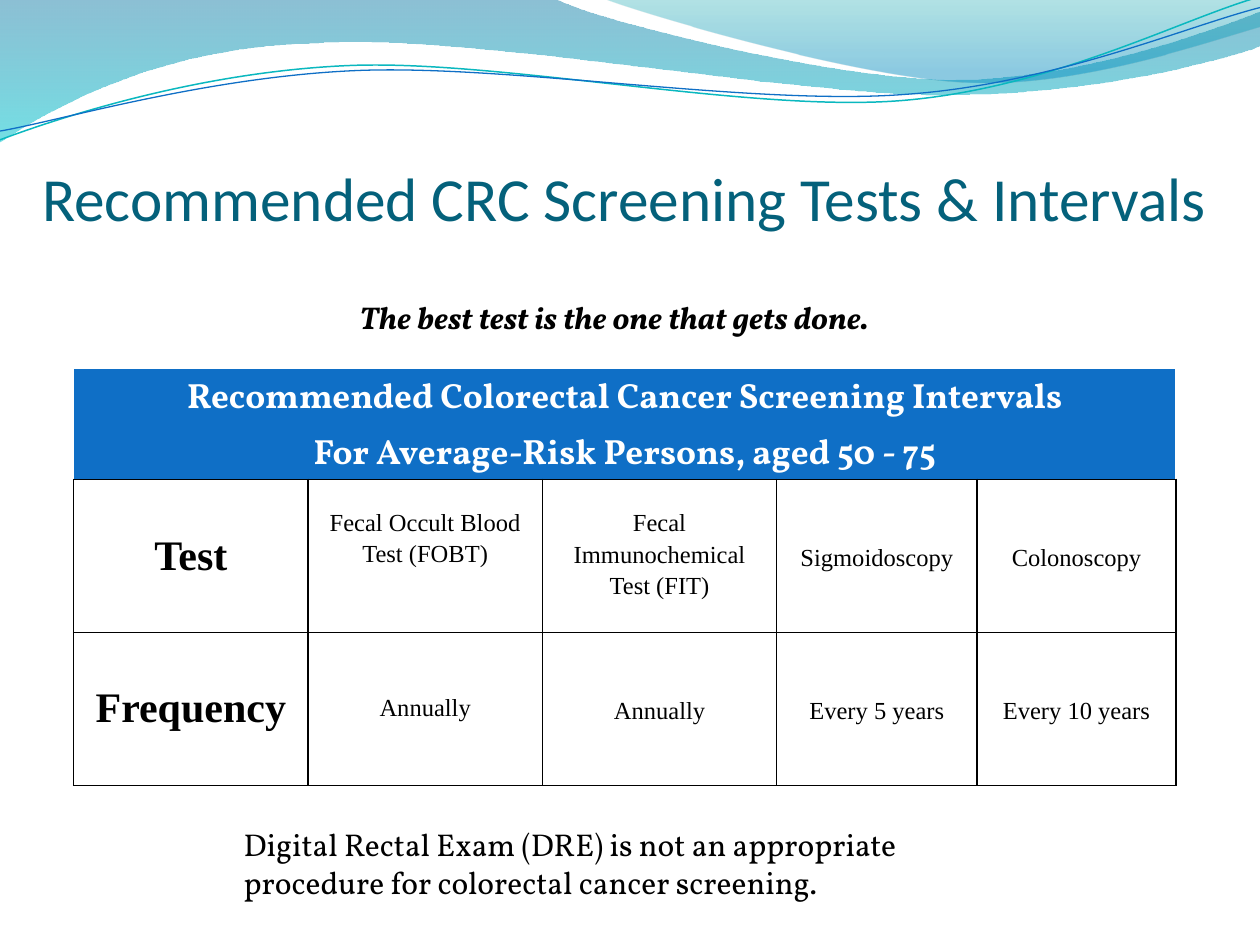
from math import cos, radians, sin

from lxml import etree
from pptx import Presentation
from pptx.dml.color import RGBColor
from pptx.enum.text import MSO_ANCHOR, PP_ALIGN
from pptx.oxml.ns import qn
from pptx.util import Emu, Inches, Pt

# Grid of 100 columns by 75 rows
WIDTH, HEIGHT = Inches(10), Inches(7.5)
UNIT = WIDTH / 100

CENTER, LEFT = PP_ALIGN.CENTER, PP_ALIGN.LEFT
MIDDLE, TOP, BOTTOM = MSO_ANCHOR.MIDDLE, MSO_ANCHOR.TOP, MSO_ANCHOR.BOTTOM

BLACK = RGBColor(0x00, 0x00, 0x00)
WHITE = RGBColor(0xFF, 0xFF, 0xFF)
BLUE = RGBColor(0x0F, 0x6F, 0xC6)
TEAL = RGBColor(0x0A, 0xB8, 0xBF)
TITLE_TEAL = RGBColor(0x04, 0x61, 0x7B)
DEEP_BLUE = RGBColor(0x00, 0x74, 0xA1)
CYAN = RGBColor(0x00, 0xC6, 0xCF)
SEA_GREEN = RGBColor(0x00, 0xA1, 0xA9)
SKY_BLUE = RGBColor(0x00, 0x8B, 0xBF)

SANS, SERIF, TABLE_FONT = "Calibri", "Vollkorn", "Times New Roman"
LINE_TILT = 2.7

# Each path is a start point, then steps: one point is a line, three a curve
BROAD_WAVE = ((0, 0), [
    [(44, -0.1)],
    [(47.6, 1.7), (66.4, 6.3), (75.8, 6.3)],
    [(85.3, 6.3), (95.8, 2.6), (100, 0.9)],
    [(100.1, 3.6)],
    [(98.3, 4.4), (87, 7.6), (74.6, 7.5)],
    [(62.2, 7.5), (38.2, 2.8), (25.7, 3.4)],
    [(12.9, 3.6), (4.6, 8.3), (-0.1, 11.3)],
    [(0, 0)],
])
RIGHT_WAVE = ((47.9, -0.1), [
    [(50.9, 1.1), (68.2, 6.2), (76.9, 6.5)],
    [(85.6, 6.9), (96.1, 3.2), (100, 2.1)],
    [(100, 0)],
    [(47.9, -0.1)],
])
TEAL_LINE = ((0, 11.1), [
    [(4.8, 9.3), (15.8, 5.7), (27.7, 5.2)],
    [(39.5, 4.7), (59.3, 8.9), (71.3, 8)],
    [(83.3, 7.1), (93.8, 1.5), (99.8, -0.2)],
])
BLUE_LINE = ((0, 10.4), [
    [(4.7, 9.6), (16.4, 6.1), (28.3, 5.6)],
    [(40.3, 5.1), (59.7, 8.4), (71.7, 7.5)],
    [(83.6, 6.7), (94.1, 2.1), (100, 0.6)],
])

COLUMNS = [18.6, 18.6, 18.6, 15.9, 15.8]
ROWS = [8.85, 12.15, 12.15]
HEADING = ["Recommended Colorectal Cancer Screening Intervals",
           "For Average-Risk Persons, aged 50 - 75"]
BODY = [
    ["Test", "Fecal Occult Blood Test (FOBT)", "Fecal Immunochemical Test (FIT)",
     "Sigmoidoscopy", "Colonoscopy"],
    ["Frequency", "Annually", "Annually", "Every 5 years", "Every 10 years"],
]
# Space below the text of each body cell, in inches
GAPS_BELOW = [[0.05, 0.3, 0.05, 0, 0], [0.07, 0.05, 0, 0, 0]]


def grid(*lengths):
    return [Emu(round(length * UNIT)) for length in lengths]


def turn(point, center, angle):
    """Point turned clockwise about the centre."""
    x, y = point[0] - center[0], point[1] - center[1]
    c, s = cos(radians(angle)), sin(radians(angle))
    return center[0] + x * c - y * s, center[1] + x * s + y * c


def add_outline(page, outline, close=False):
    start, steps = outline
    points = [grid(*point) for step in steps for point in step]
    builder = page.shapes.build_freeform(*grid(*start))
    builder.add_line_segments(points, close=close)
    shape = builder.convert_to_shape()
    shape.shadow.inherit = False
    # Gather each three points into one Bezier curve
    segments = iter(list(shape.element.iter(qn("a:lnTo"))))
    for step in steps:
        parts = [next(segments) for _ in step]
        if len(parts) == 3:
            curve = etree.Element(qn("a:cubicBezTo"))
            parts[0].addprevious(curve)
            for part in parts:
                curve.append(part[0])
                part.getparent().remove(part)
    return shape


def add_wave(page, outline, stops):
    """Filled wave; stops are (position, colour, opacity in percent)."""
    shape = add_outline(page, outline, True)
    shape.line.fill.background()
    shape.fill.gradient()
    shape.fill.gradient_angle = 270
    for stop, (position, color, _) in zip(shape.fill.gradient_stops, stops):
        stop.position = position
        stop.color.rgb = color
    colors = shape.element.spPr.iter(qn("a:srgbClr"))
    for element, (_, _, opacity) in zip(colors, stops):
        etree.SubElement(element, qn("a:alpha")).set("val", str(opacity * 1000))


def add_wave_line(page, outline, center, color, width):
    """Thin curve, laid level and then tilted as a shape."""
    start, steps = outline
    level = [[turn(point, center, LINE_TILT) for point in step] for step in steps]
    shape = add_outline(page, (turn(start, center, LINE_TILT), level))
    shape.rotation = 360 - LINE_TILT
    shape.fill.background()
    shape.line.color.rgb = color
    shape.line.width = Pt(width)


def add_span(para, text, font, size, color, bold=False, italic=False):
    span = para.add_run()
    span.text = text
    span.font.name, span.font.size = font, Pt(size)
    span.font.color.rgb = color
    span.font.bold, span.font.italic = bold, italic


def add_text(page, place, text, font, size, color, align=LEFT, **style):
    box = page.shapes.add_textbox(*grid(*place))
    frame = box.text_frame
    frame.word_wrap = True
    para = frame.paragraphs[0]
    para.alignment = align
    add_span(para, text, font, size, color, **style)
    return frame


def set_borders(cell, colors):
    """Borders in the order left, right, top, bottom."""
    properties = cell._tc.get_or_add_tcPr()
    for index, (side, color) in enumerate(zip(("lnL", "lnR", "lnT", "lnB"), colors)):
        line = etree.Element(qn(f"a:{side}"), w=str(Pt(1)))
        fill = etree.SubElement(line, qn("a:solidFill"))
        etree.SubElement(fill, qn("a:srgbClr"), val=str(color))
        properties.insert(index, line)


def fill_cell(cell, lines, anchor, borders, *style):
    cell.margin_left = cell.margin_right = Inches(0.07)
    cell.margin_top = cell.margin_bottom = 0
    cell.vertical_anchor = anchor
    frame = cell.text_frame
    for index, text in enumerate(lines):
        para = frame.add_paragraph() if index else frame.paragraphs[0]
        para.alignment, para.line_spacing = CENTER, 1.15
        add_span(para, text, *style)
    set_borders(cell, borders)


def add_interval_table(page):
    place = grid(5.85, 29.2, sum(COLUMNS), sum(ROWS))
    table = page.shapes.add_table(len(ROWS), len(COLUMNS), *place).table
    table.first_row = table.horz_banding = False
    for column, width in zip(table.columns, grid(*COLUMNS)):
        column.width = width
    for row, height in zip(table.rows, grid(*ROWS)):
        row.height = height

    # Heading across all columns
    heading = table.cell(0, 0)
    heading.merge(table.cell(0, len(COLUMNS) - 1))
    heading.fill.solid()
    heading.fill.fore_color.rgb = BLUE
    fill_cell(heading, HEADING, TOP, (WHITE, WHITE, WHITE, BLACK), SERIF, 20, WHITE, True)

    # Tests and their frequencies
    for row, (texts, gaps) in enumerate(zip(BODY, GAPS_BELOW), 1):
        for column, (text, gap) in enumerate(zip(texts, gaps)):
            cell = table.cell(row, column)
            cell.fill.background()
            is_label = column == 0
            fill_cell(cell, [text], MIDDLE, [BLACK] * 4,
                      TABLE_FONT, 24 if is_label else 14, BLACK, is_label)
            cell.margin_bottom = Inches(gap)


def main():
    deck = Presentation()
    deck.slide_width, deck.slide_height = WIDTH, HEIGHT
    page = deck.slides.add_slide(deck.slide_layouts[6])

    # Waves along the top
    add_wave(page, BROAD_WAVE, [(0, DEEP_BLUE, 45), (1, CYAN, 55)])
    add_wave(page, RIGHT_WAVE, [(0, SEA_GREEN, 30), (0.8, SKY_BLUE, 45)])
    add_wave_line(page, TEAL_LINE, (49.9, 5.75), TEAL, 0.85)
    add_wave_line(page, BLUE_LINE, (49.95, 5.9), BLUE, 0.75)

    # Title
    title = add_text(page, (3.35, 11.65, 94.2, 6.9),
                     "Recommended CRC Screening Tests & Intervals", SANS, 35, TITLE_TEAL)
    title.margin_left = title.margin_right = title.margin_bottom = 0
    title.vertical_anchor = BOTTOM

    # Table with the lines below and above it
    add_interval_table(page)
    add_text(page, (18.35, 65, 65, 7.1),
             "Digital Rectal Exam (DRE) is not an appropriate procedure "
             "for colorectal cancer screening.", SERIF, 18, BLACK)
    add_text(page, (16.65, 23.15, 64.2, 4), "The best test is the one that gets done.",
             SERIF, 18, BLACK, CENTER, bold=True, italic=True)

    deck.save("out.pptx")


if __name__ == "__main__":
    main()
